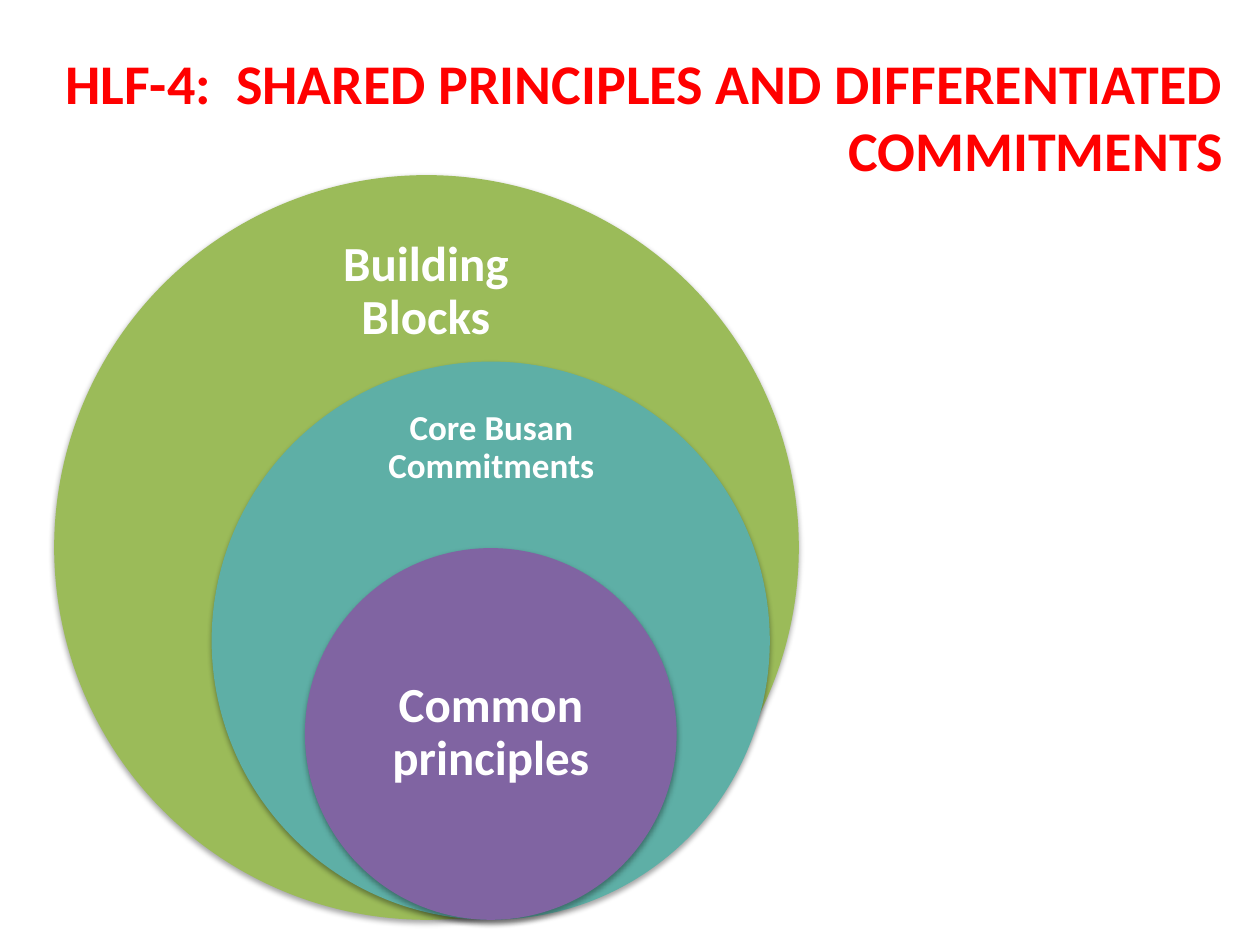
"""Build a slide of three nested circles of shared principles and commitments."""
from lxml.etree import SubElement
from pptx import Presentation
from pptx.dml.color import RGBColor
from pptx.enum.shapes import MSO_SHAPE
from pptx.enum.text import MSO_ANCHOR, MSO_AUTO_SIZE, PP_ALIGN
from pptx.oxml.ns import qn
from pptx.util import Inches, Pt


def color(value):
    """Turn a hex string into a colour."""
    return RGBColor.from_string(value)


def write(box, text, size, ink, align, inset):
    """Put one bold paragraph into a box."""
    frame = box.text_frame
    frame.text = text
    frame_format = {
        "word_wrap": True,
        "auto_size": MSO_AUTO_SIZE.NONE,
        "vertical_anchor": MSO_ANCHOR.MIDDLE,
        "margin_left": Inches(inset),
        "margin_right": Inches(inset),
        "margin_top": Inches(min(inset, 0.22)),
        "margin_bottom": Inches(min(inset, 0.22)),
    }
    for name, value in frame_format.items():
        setattr(frame, name, value)
    para = frame.paragraphs[0]
    para.alignment = align
    span = para.runs[0]
    for name, value in {"name": "Calibri", "size": Pt(size), "bold": True}.items():
        setattr(span.font, name, value)
    span.font.color.rgb = color(ink)
    return para


deck = Presentation()
deck.slide_width, deck.slide_height = Inches(10), Inches(7.5)
page = deck.slides.add_slide(deck.slide_layouts[5])

title = page.shapes.title
title_place = {"left": 0.28, "top": 0.29, "width": 9.53, "height": 1.25}
for name, value in title_place.items():
    setattr(title, name, Inches(value))
write(title, "HLF-4:  SHARED PRINCIPLES AND DIFFERENTIATED COMMITMENTS",
      32, "FF0000", PP_ALIGN.RIGHT, 0.1)

circles_bottom = 7.3
circles = [
    (0.43, 5.91, "9BBB59", "Building Blocks", 28, (2.35, 1.87, 2.06, 0.89), 0.13),
    (1.68, 4.43, "5EAFA6", "Core Busan Commitments", 20, (2.87, 3.14, 2.06, 0.83), 0.16),
    (2.42, 2.95, "8064A2", "Common principles", 28, (2.85, 5.08, 2.09, 1.48), 0.22),
]
for left, diameter, fill, label, size, place, inset in circles:
    circle = page.shapes.add_shape(
        MSO_SHAPE.OVAL, Inches(left), Inches(circles_bottom - diameter),
        Inches(diameter), Inches(diameter))
    circle.fill.solid()
    circle.fill.fore_color.rgb = color(fill)
    circle.line.fill.background()
    circle.shadow.inherit = False
    effects = circle.fill._xPr.find(qn("a:effectLst"))
    shadow = SubElement(effects, qn("a:outerShdw"), blurRad=str(Pt(3.1)),
                        dist=str(Pt(1.8)), dir="5400000", rotWithShape="0")
    shade = SubElement(shadow, qn("a:srgbClr"), val="000000")
    SubElement(shade, qn("a:alpha"), val="35000")

    box = page.shapes.add_textbox(*map(Inches, place))
    para = write(box, label, size, "FFFFFF", PP_ALIGN.CENTER, inset)
    para.line_spacing = 0.9

deck.save("out.pptx")
